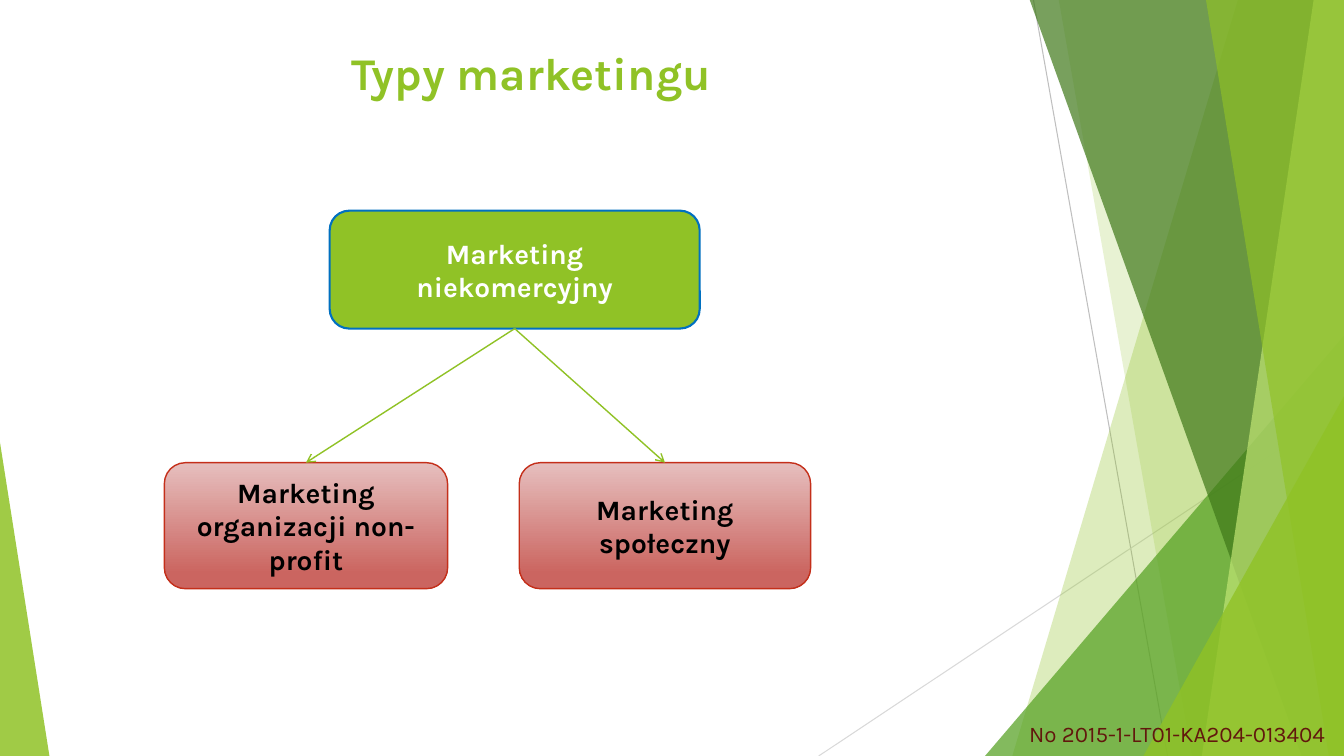
"""Build the slide about types of marketing."""
from dataclasses import dataclass
from typing import Optional

from pptx import Presentation
from pptx.dml.color import RGBColor
from pptx.enum.shapes import MSO_CONNECTOR, MSO_SHAPE
from pptx.enum.text import MSO_ANCHOR, MSO_AUTO_SIZE, PP_ALIGN
from pptx.oxml.ns import qn
from pptx.util import Inches, Pt
from lxml.etree import SubElement

GREEN = "90C226"
TOP, BASE, EDGE = -0.01, 7.5, 13.33


@dataclass
class Band:
    """A see-through band that runs from its top corner to the right edge."""
    top: float
    foot: float
    color: str
    alpha: int


@dataclass
class Wedge:
    """A see-through triangle with its tip at the left or right."""
    left: float
    top: float
    width: float
    tip: int
    color: str
    alpha: int


@dataclass
class Box:
    """A rounded box of the chart; without a fill it gets the red blend."""
    text: str
    left: float
    top: float
    width: float
    height: float
    line: str
    weight: float
    ink: str
    fill: Optional[str] = None


BACK = [
    Band(12.28, 10.04, GREEN, 30),
    Band(10.5, 11.82, GREEN, 20),
    Wedge(9.77, 3.33, 3.56, 1, "54A021", 72),
    Band(10.21, 12.91, "3F7819", 70),
    Band(13.03, 11.92, "C0E474", 70),
    Band(11.96, 13.18, GREEN, 65),
    Wedge(11.34, 3.93, 1.99, 1, GREEN, 80),
    Wedge(0, 4.39, 0.49, 0, GREEN, 85),
]
ROOT = Box("Marketing\nniekomercyjny", 3.27, 2.09, 3.67, 1.17,
           "0070C0", 1.5, "FFFFFF", GREEN)
LEAVES = [
    Box("Marketing organizacji non-profit", 1.63, 4.59, 2.81, 1.25,
        "C42F1A", 1, "000000"),
    Box("Marketing społeczny", 5.15, 4.59, 2.89, 1.25,
        "C42F1A", 1, "000000"),
]


def tint(target, color: str) -> None:
    """Set a fill or line fill to one solid colour."""
    target.solid()
    target.fore_color.rgb = RGBColor.from_string(color)


def write(frame, text: str, size: float, color: str, bold: bool = False,
          align=PP_ALIGN.LEFT, anchor=MSO_ANCHOR.TOP, wrap: bool = True) -> None:
    """Put formatted text in a text frame, one paragraph a line."""
    frame.text = text
    frame.word_wrap = wrap
    frame.vertical_anchor = anchor
    for para in frame.paragraphs:
        para.alignment = align
        for run in para.runs:
            font = run.font
            font.name, font.size, font.bold = "Karla", Pt(size), bold
            font.color.rgb = RGBColor.from_string(color)


def veil(shape, color: str, alpha: int) -> None:
    """Give a shape a see-through fill and no line."""
    shape.shadow.inherit = False
    tint(shape.fill, color)
    shape.line.fill.background()
    node = shape.element.spPr.find(f".//{qn('a:srgbClr')}")
    SubElement(node, qn("a:alpha"), val=str(alpha * 1000))


def add_band(shapes, band: Band) -> None:
    """Draw one band."""
    ends = [(EDGE, TOP), (EDGE, BASE), (band.foot, BASE)]
    form = shapes.build_freeform(Inches(band.top), Inches(TOP))
    form.add_line_segments([(Inches(x), Inches(y)) for x, y in ends], close=True)
    veil(form.convert_to_shape(), band.color, band.alpha)


def add_wedge(shapes, wedge: Wedge) -> None:
    """Draw one wedge that stands on the foot of the slide."""
    shape = shapes.add_shape(
        MSO_SHAPE.ISOSCELES_TRIANGLE, Inches(wedge.left), Inches(wedge.top),
        Inches(wedge.width), Inches(BASE - wedge.top))
    shape.adjustments[0] = wedge.tip
    veil(shape, wedge.color, wedge.alpha)


def add_line(shapes, start: tuple[float, float], end: tuple[float, float],
             color: str, weight: float):
    """Draw a straight line without shadow."""
    line = shapes.add_connector(
        MSO_CONNECTOR.STRAIGHT, *(Inches(v) for v in (*start, *end)))
    tint(line.line.fill, color)
    line.line.width = Pt(weight)
    SubElement(line.element.spPr, qn("a:effectLst"))
    return line


def add_box(shapes, box: Box):
    """Draw one box with its label."""
    shape = shapes.add_shape(
        MSO_SHAPE.ROUNDED_RECTANGLE, Inches(box.left), Inches(box.top),
        Inches(box.width), Inches(box.height))
    shape.shadow.inherit = False
    if box.fill:
        tint(shape.fill, box.fill)
    else:
        shape.fill.gradient()
        shape.fill.gradient_angle = 270
        blend = [(0, "E6BFBE"), (0.88, "CB6560")]
        for stop, (place, color) in zip(shape.fill.gradient_stops, blend):
            stop.position = place
            stop.color.rgb = RGBColor.from_string(color)
    tint(shape.line.fill, box.line)
    shape.line.width = Pt(box.weight)
    write(shape.text_frame, box.text, 20, box.ink, bold=True,
          align=PP_ALIGN.CENTER, anchor=MSO_ANCHOR.MIDDLE)
    return shape


def add_arrow(shapes, root, leaf) -> None:
    """Join the foot of the root box to the top of a leaf box."""
    line = add_line(shapes, (0, 0), (1, 1), GREEN, 1)
    line.begin_connect(root, 2)
    line.end_connect(leaf, 0)
    SubElement(line.element.spPr.find(qn("a:ln")), qn("a:tailEnd"), type="arrow")


def main() -> None:
    """Build and save the slide."""
    deck = Presentation()
    deck.slide_width, deck.slide_height = Inches(EDGE), Inches(BASE)
    slide = deck.slides.add_slide(deck.slide_layouts[5])
    shapes = slide.shapes

    add_line(shapes, (10.25, 0), (11.58, BASE), "BFBFBF", 0.75)
    add_line(shapes, (EDGE, 4.03), (8.12, BASE), "D9D9D9", 0.75)
    for part in BACK:
        if isinstance(part, Band):
            add_band(shapes, part)
        else:
            add_wedge(shapes, part)

    note = shapes.add_textbox(Inches(10.11), Inches(7.1), Inches(3.23), Inches(0.37))
    write(note.text_frame, "No 2015-1-LT01-KA204-013404", 16, "62170D", wrap=False)
    note.text_frame.auto_size = MSO_AUTO_SIZE.SHAPE_TO_FIT_TEXT

    title = shapes.title
    title.left, title.top = Inches(2.91), Inches(0.4)
    title.width, title.height = Inches(4.97), Inches(1.19)
    write(title.text_frame, "Typy marketingu", 32.4, GREEN, bold=True,
          align=PP_ALIGN.CENTER)
    title.text_frame.margin_right = Inches(0.35)

    root = add_box(shapes, ROOT)
    leaves = [add_box(shapes, leaf) for leaf in LEAVES]
    for leaf in leaves:
        add_arrow(shapes, root, leaf)
    deck.save("out.pptx")


if __name__ == "__main__":
    main()
